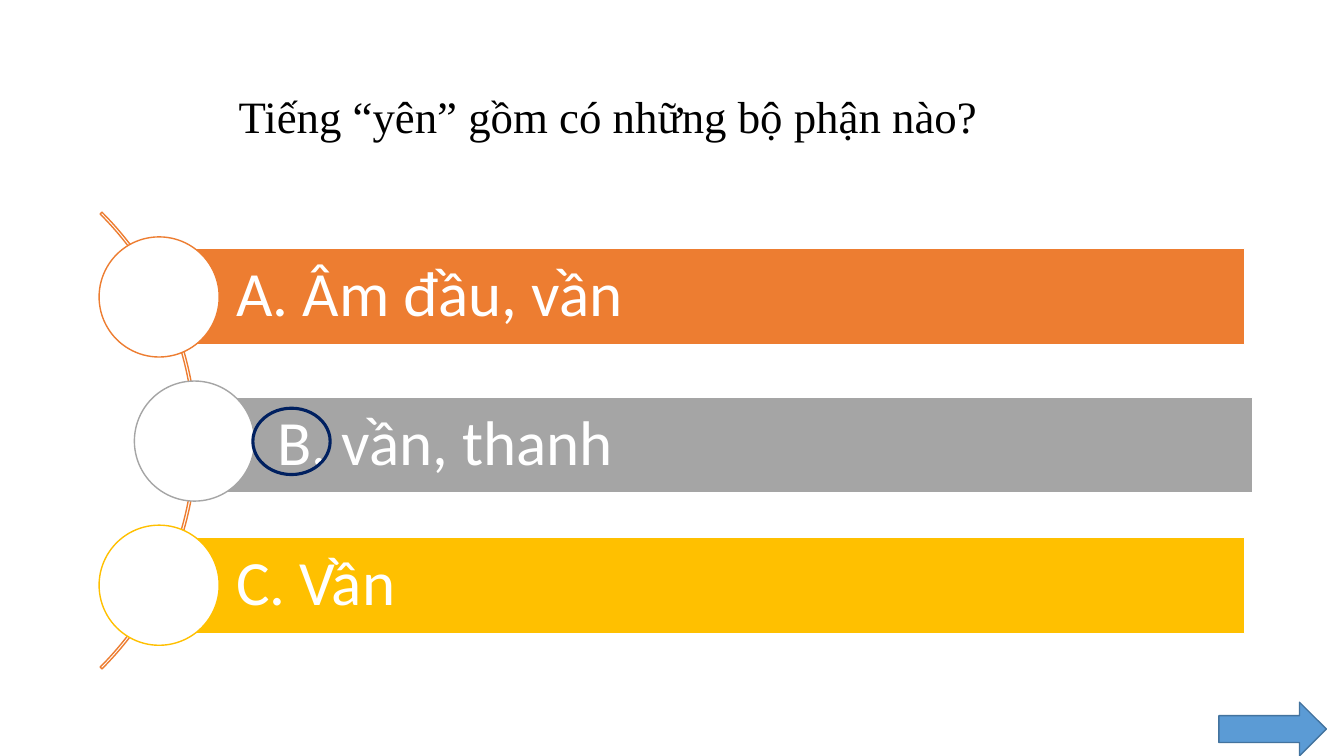
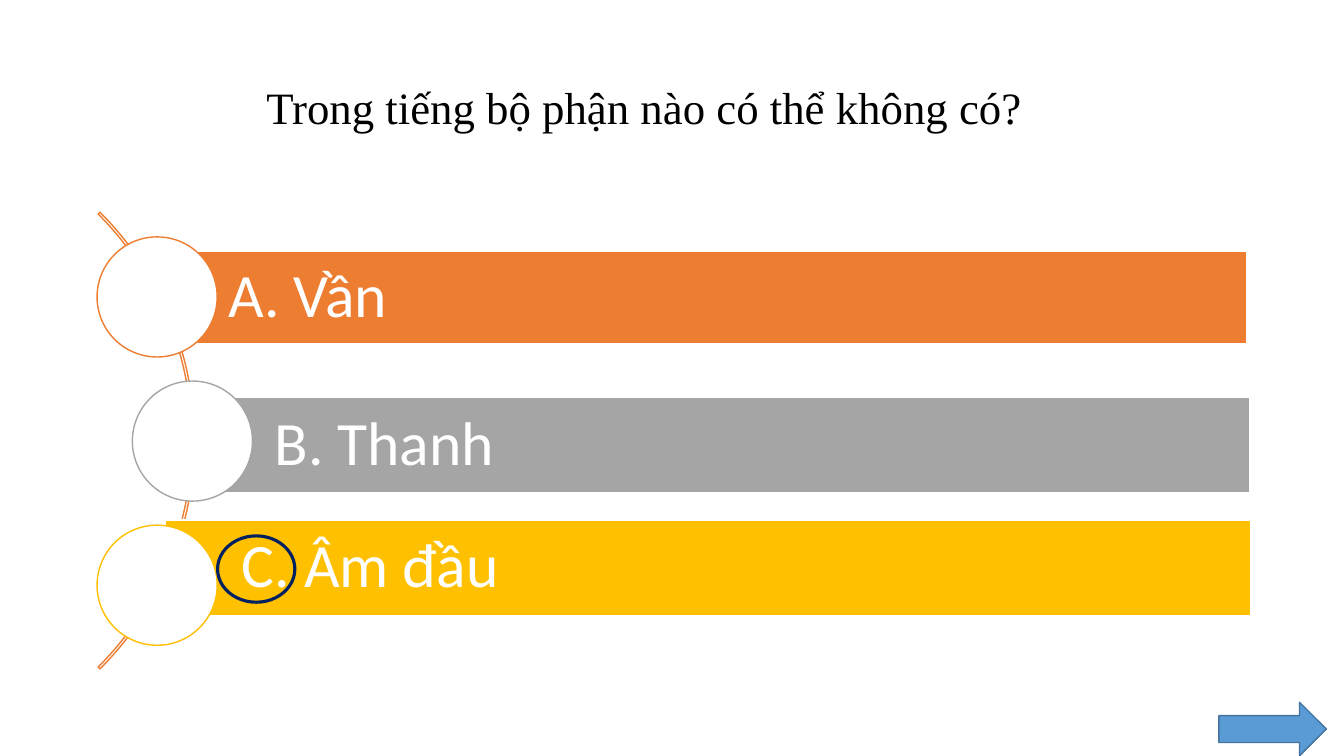
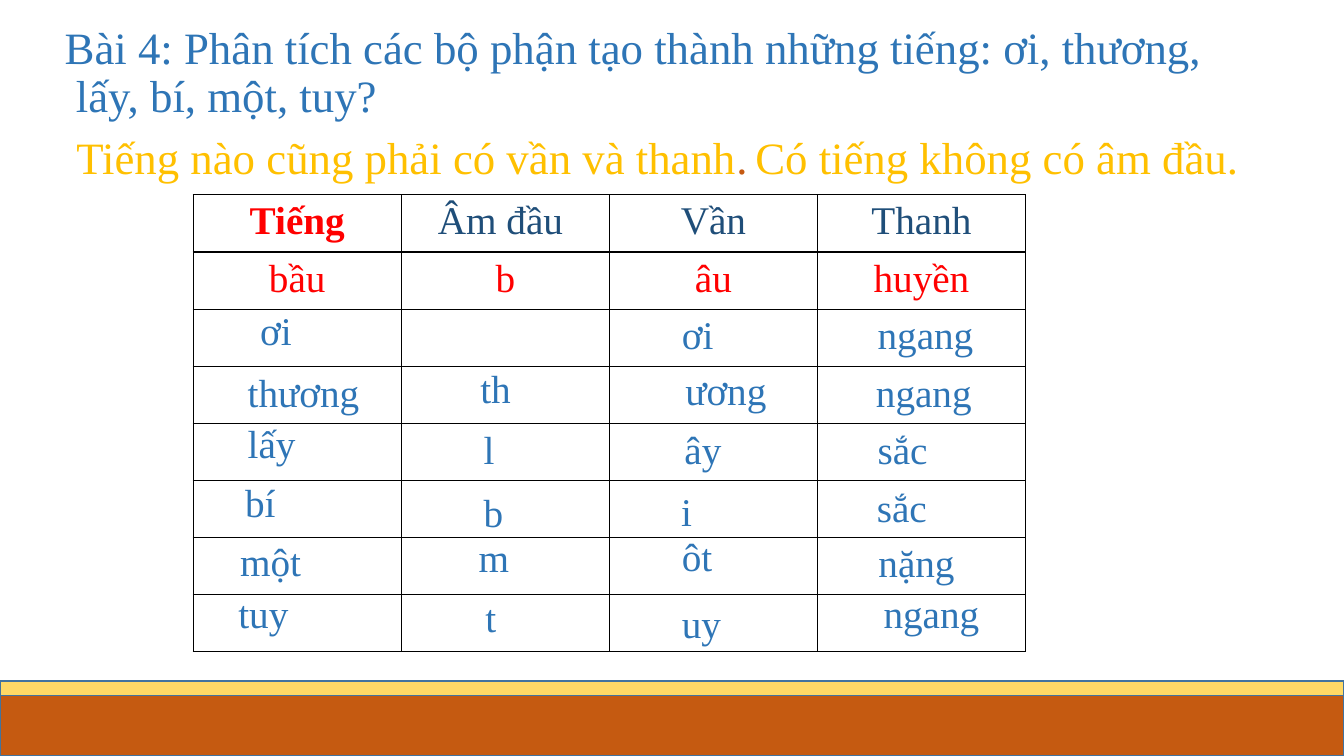
"""Build two quiz slides and one table exercise on the parts of a Vietnamese syllable."""
import dataclasses

import lxml.etree
import pptx
import pptx.dml.color
import pptx.enum.shapes
import pptx.enum.text
import pptx.oxml.ns
import pptx.util


@dataclasses.dataclass(frozen=True)
class Theme:
    serif: str = "Times New Roman"
    sans: str = "Calibri"
    title_size: int = 32
    table_size: int = 28
    black: str = "000000"
    white: str = "FFFFFF"
    orange: str = "ED7D31"
    gray: str = "A5A5A5"
    gold: str = "FFC000"
    navy: str = "002060"
    arrow: str = "5B9BD5"
    outline: str = "43739E"
    pale_gold: str = "FFD966"
    rust: str = "C55A11"
    blue: str = "2E75B6"
    dark_blue: str = "1F4E79"
    red: str = "FF0000"


theme = Theme()
rgb = pptx.dml.color.RGBColor.from_string
shapes = pptx.enum.shapes.MSO_SHAPE
align = pptx.enum.text.PP_ALIGN
middle = pptx.enum.text.MSO_ANCHOR.MIDDLE

presentation = pptx.Presentation()
presentation.slide_width = pptx.util.Inches(13.33)
presentation.slide_height = pptx.util.Inches(7.5)
grid_columns, grid_rows = 160, 90
column = presentation.slide_width / grid_columns
row = presentation.slide_height / grid_rows


def add_shape(slide, kind, area, fill, line, line_width=1):
    """Add a shape on the grid; a fill of None leaves it hollow."""
    left, top, width, height = area
    shape = slide.shapes.add_shape(
        kind, round(left * column), round(top * row), round(width * column), round(height * row))
    shape.shadow.inherit = False
    if fill:
        shape.fill.solid()
        shape.fill.fore_color.rgb = rgb(fill)
    else:
        shape.fill.background()
    shape.line.color.rgb = rgb(line)
    shape.line.width = pptx.util.Pt(line_width)
    return shape


def write_text(frame, text, font, size, color, spacing=None, alignment=align.LEFT):
    """Fill a text frame with one formatted paragraph and return it."""
    paragraph = frame.paragraphs[0]
    paragraph.text = text
    paragraph.alignment = alignment
    paragraph.line_spacing = spacing
    paragraph.font.name = font
    paragraph.font.size = pptx.util.Pt(size)
    paragraph.font.color.rgb = rgb(color)
    return paragraph


titles = [
    ("Tiếng “yên” gồm có những bộ phận nào?", (27.2, 5.5, 104.5, 17.4), theme.black, True),
    ("Trong tiếng bộ phận nào có thể không có?", (30.5, 4.4, 100.2, 17.4), theme.black, True),
    ("Bài 4: Phân tích các bộ phận tạo thành những tiếng: ơi, thương,\v lấy, bí, một, tuy?",
     (6.5, 2.4, 139.1, 12.8), theme.blue, False),
]
for text, (left, top, width, height), color, wrap in titles:
    slide = presentation.slides.add_slide(presentation.slide_layouts[5])
    title = slide.shapes.title
    title.left, title.top = round(left * column), round(top * row)
    title.width, title.height = round(width * column), round(height * row)
    title.text_frame.word_wrap = wrap
    title.text_frame.vertical_anchor = middle
    write_text(title.text_frame, text, theme.serif, theme.title_size, color, 0.9)
*quiz_slides, table_slide = presentation.slides

quizzes = [
    (0, 45, (30.1, 48.6), [
        ("A. Âm đầu, vần", (19, 29.6, 129.2, 11.4)),
        ("B. vần, thanh", (23.9, 47.3, 125.2, 11.4)),
        ("C. Vần", (19, 64, 129.2, 11.4))]),
    (-0.24, 44, (25.9, 63.8), [
        ("A. Vần", (18.1, 29.9, 130.3, 11)),
        ("B. Thanh", (23.6, 47.3, 125.2, 11.4)),
        ("C. Âm đầu", (19.7, 61.9, 129.2, 11.4))]),
]
answer_colors = [theme.orange, theme.gray, theme.gold]
circle_lefts = [11.8, 16, 11.8]
circle_top, circle_step, circle_size = 28.2, 17.16, 14.3
for slide, (shift, size, ring, answers) in zip(quiz_slides, quizzes):
    arc = add_shape(slide, shapes.BLOCK_ARC, (shift - 53.5, 14, 76.9, 76.9), None, theme.orange)
    for index, value in enumerate((189, 27, 0.004)):
        arc.adjustments[index] = value
    for index, (text, area) in enumerate(answers):
        color = answer_colors[index]
        bar = add_shape(slide, shapes.RECTANGLE, area, color, theme.white)
        frame = bar.text_frame
        frame.margin_left = round(9.1 * column)
        frame.margin_right = frame.margin_top = frame.margin_bottom = round(1.4 * column)
        frame.vertical_anchor = middle
        write_text(frame, text, theme.sans, size, theme.white, 0.9)
        circle = (circle_lefts[index] + shift, circle_top + index * circle_step, circle_size, circle_size)
        add_shape(slide, shapes.OVAL, circle, theme.white, color)
    add_shape(slide, shapes.OVAL, (*ring, 9.2, 7.9), None, theme.navy, 2.25)
    add_shape(slide, shapes.RIGHT_ARROW, (145.1, 83.6, 12.8, 6.4), theme.arrow, theme.outline)

for top, color in ((81.1, theme.pale_gold), (82.8, theme.rust)):
    band = (0, top, grid_columns, grid_rows - top)
    add_shape(table_slide, shapes.RECTANGLE, band, color, theme.outline)

table_rows = [
    [("Tiếng", theme.red), ("Âm đầu ", theme.dark_blue), ("Vần", theme.dark_blue), ("Thanh", theme.dark_blue)],
    [(word, theme.red) for word in ("bầu", "b", "âu", "huyền")],
] + [[("", theme.blue)] * 4] * 6
table = table_slide.shapes.add_table(
    len(table_rows), 4, round(23 * column), round(23.2 * row), round(99.1 * column), round(54.4 * row)).table
table.first_row = table.horz_banding = False
for row_index, words in enumerate(table_rows):
    for column_index, (word, color) in enumerate(words):
        cell = table.cell(row_index, column_index)
        cell.fill.background()
        if word:
            paragraph = write_text(
                cell.text_frame, word, theme.serif, theme.table_size, color, alignment=align.CENTER)
            paragraph.font.bold = (row_index, column_index) == (0, 0)
        properties = cell._tc.get_or_add_tcPr()
        for position, side in enumerate(("lnL", "lnR", "lnT", "lnB")):
            border = lxml.etree.Element(pptx.oxml.ns.qn(f"a:{side}"), w=str(pptx.util.Pt(1)))
            fill = lxml.etree.SubElement(border, pptx.oxml.ns.qn("a:solidFill"))
            lxml.etree.SubElement(fill, pptx.oxml.ns.qn("a:srgbClr"), val=theme.black)
            properties.insert(position, border)

word_height = 6.8
words = [
    ("ơi", 29.8, 35.9, 9), ("ơi", 80, 36.4, 6.2), ("ngang", 103.3, 36.4, 13.9),
    ("thương", 28.3, 43.3, 15.8), ("th", 56, 42.8, 6.1), ("ương", 80.4, 43, 12.1), ("ngang", 103.1, 43.3, 13.9),
    ("lấy", 28.3, 49.3, 8.2), ("l", 56.4, 50, 3.7), ("ây", 80.3, 50, 6.8), ("sắc", 103.3, 50, 8.4),
    ("bí", 28, 56.4, 6.1), ("b", 56.4, 57.5, 4.8), ("i", 79.9, 57.4, 3.7), ("sắc", 103.2, 56.9, 8.4),
    ("một", 27.4, 63.4, 9.7), ("m", 55.8, 62.9, 6.1), ("ôt", 80, 62.8, 6.1), ("nặng", 103.4, 63.5, 11.5),
    ("tuy", 27.2, 69.6, 8.4), ("t", 56.6, 70, 3.7), ("uy", 80, 70.7, 7.1), ("ngang", 104, 69.6, 13.9),
]
for text, left, top, width in words:
    box = table_slide.shapes.add_textbox(
        round(left * column), round(top * row), round(width * column), round(word_height * row))
    box.text_frame.word_wrap = False
    write_text(box.text_frame, text, theme.serif, theme.table_size, theme.blue)

conclusions = [
    ("Tiếng nào cũng phải có vần và thanh", ".", 7.9, 82.4),
    (" Có tiếng không có âm đầu.", "", 87.4, 65.2),
]
for text, ending, left, width in conclusions:
    box = table_slide.shapes.add_textbox(
        round(left * column), round(15.5 * row), round(width * column), round(7.1 * row))
    box.text_frame.word_wrap = True
    box.text_frame.vertical_anchor = middle
    paragraph = write_text(box.text_frame, text, theme.serif, theme.title_size, theme.gold, 0.9)
    if ending:
        run = paragraph.add_run()
        run.text = ending
        run.font.color.rgb = rgb(theme.rust)

presentation.save("out.pptx")
